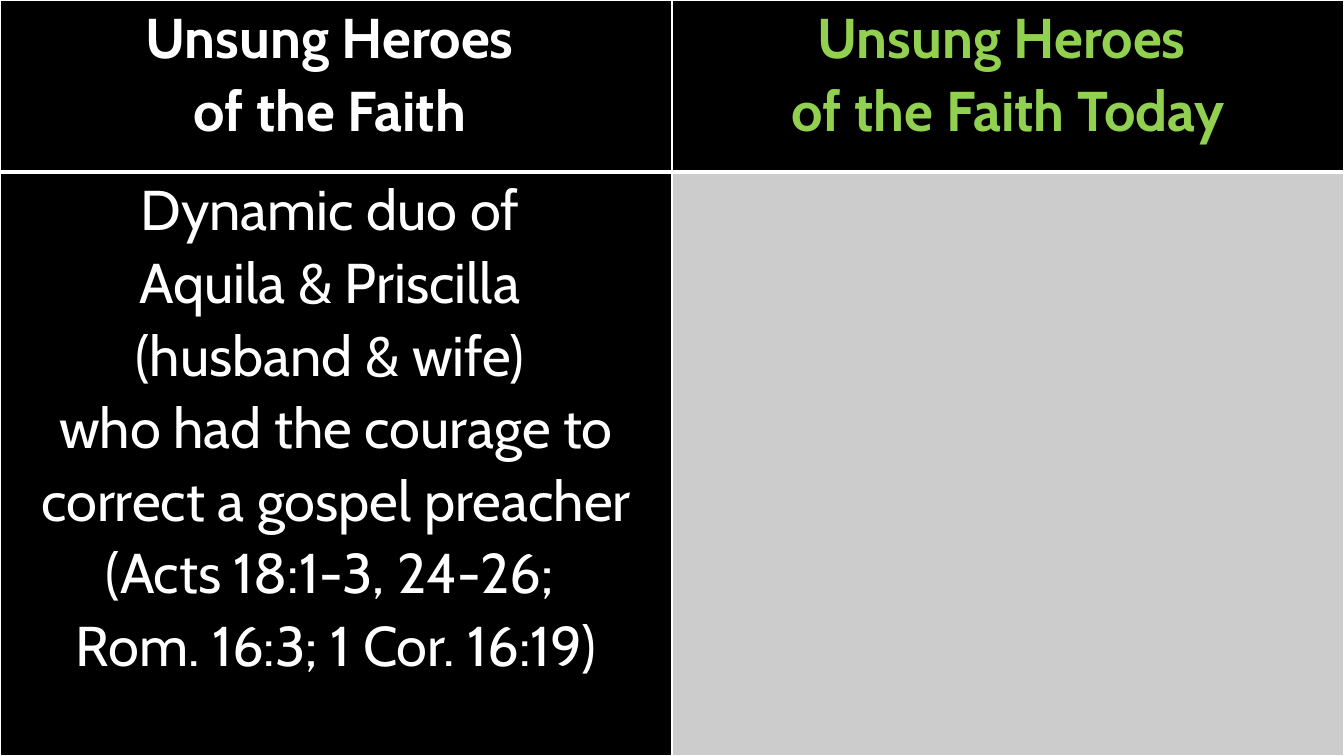
from lxml import etree
from pptx import Presentation
from pptx.dml.color import RGBColor
from pptx.enum.text import PP_ALIGN
from pptx.oxml.ns import qn
from pptx.util import Cm, Pt

CENTER = PP_ALIGN.CENTER
FONT = "Cabin"
BLACK, WHITE, GREEN, GRAY = "000000", "FFFFFF", "92D050", "CCCCCC"

# The space after a line is part of its centred width.
HEADER = [
    {"lines": ["Unsung Heroes ", "of the Faith "], "color": WHITE, "fill": BLACK},
    {"lines": ["Unsung Heroes ", "of the Faith Today"], "color": GREEN, "fill": BLACK},
]
BODY = [
    {
        "lines": [
            "Dynamic duo of ",
            "Aquila & Priscilla ",
            "(husband & wife) ",
            "who had the courage to correct a gospel preacher",
            "(Acts 18:1-3, 24-26; ",
            "Rom. 16:3; 1 Cor. 16:19)",
        ],
        "color": WHITE,
        "fill": BLACK,
    },
    {"lines": [], "color": WHITE, "fill": GRAY},
]
ROWS = [HEADER, BODY]
WIDTH, HEIGHT, HEADER_HEIGHT = Cm(33.87), Cm(19.05), Cm(4.34)
THIN, THICK = Pt(1), Pt(3)


def rgb(value):
    return RGBColor.from_string(value)


def add_borders(cell, **widths):
    """Draw white borders; the keywords L, R, T and B give their widths."""
    properties = cell._tc.get_or_add_tcPr()
    for side, width in widths.items():
        line = etree.SubElement(properties, qn(f"a:ln{side}"), w=str(width))
        solid = etree.SubElement(line, qn("a:solidFill"))
        etree.SubElement(solid, qn("a:srgbClr"), val=WHITE)


def write_lines(frame, lines, color, size=40, bold=False):
    for index, text in enumerate(lines):
        para = frame.paragraphs[0] if index == 0 else frame.add_paragraph()
        para.alignment = CENTER
        para.line_spacing = 1.07
        span = para.add_run()
        span.text = text
        span.font.name = FONT
        span.font.size = Pt(size)
        span.font.bold = bold
        span.font.color.rgb = rgb(color)


deck = Presentation()
deck.slide_width, deck.slide_height = WIDTH, HEIGHT
page = deck.slides.add_slide(deck.slide_layouts[6])
page.background.fill.solid()
page.background.fill.fore_color.rgb = rgb(BLACK)

table = page.shapes.add_table(len(ROWS), len(HEADER), 0, 0, WIDTH, HEIGHT).table
table.rows[0].height = HEADER_HEIGHT
table.rows[1].height = HEIGHT - HEADER_HEIGHT

for row, contents in enumerate(ROWS):
    is_header = row == 0
    for column, content in enumerate(contents):
        cell = table.cell(row, column)
        cell.margin_left = cell.margin_right = Cm(0.18)
        cell.margin_top = cell.margin_bottom = 0
        add_borders(
            cell,
            L=THIN,
            R=THIN,
            T=THIN if is_header else THICK,
            B=THICK if is_header else THIN,
        )
        cell.fill.solid()
        cell.fill.fore_color.rgb = rgb(content["fill"])
        write_lines(cell.text_frame, content["lines"], content["color"], bold=is_header)

deck.save("out.pptx")
